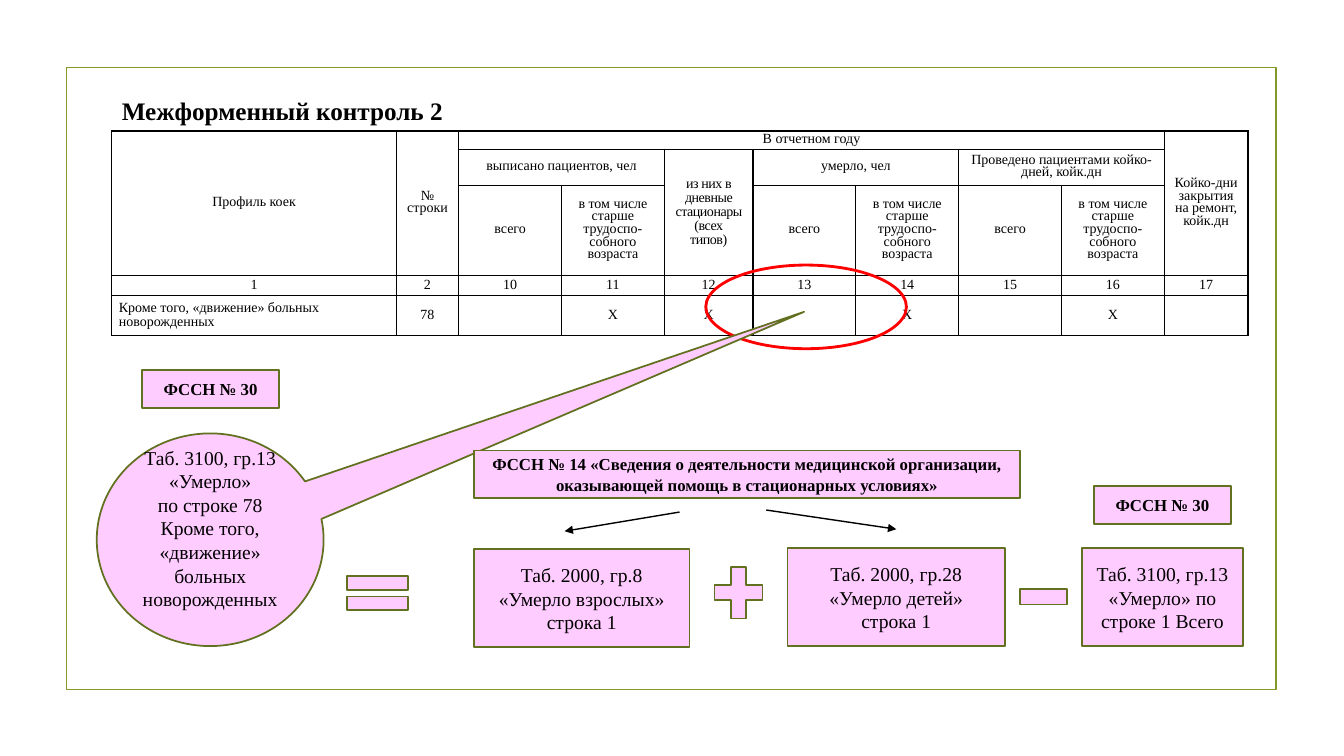
from lxml import etree
from pptx import Presentation
from pptx.dml.color import RGBColor
from pptx.enum.shapes import MSO_CONNECTOR, MSO_SHAPE
from pptx.enum.text import MSO_ANCHOR, PP_ALIGN
from pptx.oxml.ns import qn
from pptx.util import Inches, Pt

RECTANGLE, ELLIPSE = MSO_SHAPE.RECTANGLE, MSO_SHAPE.OVAL
CALLOUT = MSO_SHAPE.OVAL_CALLOUT
EQUAL, PLUS, MINUS = MSO_SHAPE.MATH_EQUAL, MSO_SHAPE.MATH_PLUS, MSO_SHAPE.MATH_MINUS
STRAIGHT = MSO_CONNECTOR.STRAIGHT
LEFT, CENTER = PP_ALIGN.LEFT, PP_ALIGN.CENTER
MIDDLE = MSO_ANCHOR.MIDDLE

FONT = "Times New Roman"
BLACK, PINK, OLIVE, FRAME_GREEN, RED = "000000", "FFCCFF", "61711F", "83992A", "FF0000"

COLUMN_WIDTHS = [2.82, 0.62, 1.02, 1.02, 0.88, 1.02, 1.02, 1.02, 1.02, 0.83]
ROW_HEIGHTS = [0.18, 0.36, 0.89, 0.2, 0.4]
HEADER_ROWS = 3
# Headings: row, column, rows spanned, columns spanned, text
HEADINGS = [
    (0, 0, 3, 1, "Профиль коек"),
    (0, 1, 3, 1, "№\vстроки"),
    (0, 2, 1, 7, "В отчетном году"),
    (0, 9, 3, 1, "Койко-дни закрытия на ремонт, койк.дн"),
    (1, 2, 1, 2, "выписано пациентов, чел"),
    (1, 4, 2, 1, "из них в дневные стационары (всех\vтипов)"),
    (1, 5, 1, 2, "умерло, чел"),
    (1, 7, 1, 2, "Проведено пациентами койко-дней, койк.дн"),
]
TOTAL_COLUMNS = (2, 5, 7)
DAY_HOSPITAL = (1, 4)
ELDERLY = "в том числе старше\nтрудоспо-\nсобного\nвозраста"
COLUMN_NUMBERS = ["1", "2"] + [str(number) for number in range(10, 18)]
NEWBORNS = ["Кроме того, «движение» больных новорожденных", "78",
            "", "X", "X", "", "X", "", "X", ""]


def color(value):
    return RGBColor.from_string(value)


def write(frame, text, size, bold=False, align=CENTER, spacing=None):
    """Fill a text frame: a newline starts a paragraph, \\v breaks a line."""
    frame.word_wrap = True
    for index, line in enumerate(text.split("\n")):
        para = frame.paragraphs[0] if index == 0 else frame.add_paragraph()
        para.text = line
        para.alignment = align
        if spacing:
            para.line_spacing = Pt(spacing)
        para.font.name, para.font.size, para.font.bold = FONT, Pt(size), bold
        para.font.color.rgb = color(BLACK)


def add_box(page, kind, box, text="", size=14, bold=False,
            fill=PINK, line=OLIVE, weight=1.25):
    shape = page.shapes.add_shape(kind, *map(Inches, box))
    shape.shadow.inherit = False
    if fill:
        shape.fill.solid()
        shape.fill.fore_color.rgb = color(fill)
    else:
        shape.fill.background()
    shape.line.color.rgb = color(line)
    shape.line.width = Pt(weight)
    if text:
        shape.text_frame.vertical_anchor = MIDDLE
        write(shape.text_frame, text, size, bold)
    return shape


def add_arrow(page, start, end):
    arrow = page.shapes.add_connector(STRAIGHT, *map(Inches, start + end))
    arrow.line.color.rgb = color(BLACK)
    arrow.line.width = Pt(1)
    properties = arrow.line._get_or_add_ln()
    etree.SubElement(properties, qn("a:tailEnd"), type="triangle")
    etree.SubElement(arrow._element.spPr, qn("a:effectLst"))


def add_borders(cell):
    properties = cell._tc.get_or_add_tcPr()
    for index, side in enumerate(("a:lnL", "a:lnR", "a:lnT", "a:lnB")):
        line = etree.Element(qn(side), w=str(Pt(1)))
        fill = etree.SubElement(line, qn("a:solidFill"))
        etree.SubElement(fill, qn("a:srgbClr"), val=BLACK)
        properties.insert(index, line)


def add_beds_table(page, left, top):
    table = page.shapes.add_table(
        len(ROW_HEIGHTS), len(COLUMN_WIDTHS), Inches(left), Inches(top),
        Inches(sum(COLUMN_WIDTHS)), Inches(sum(ROW_HEIGHTS))).table
    table.first_row = table.horz_banding = False
    for column, width in zip(table.columns, COLUMN_WIDTHS):
        column.width = Inches(width)
    for row, height in zip(table.rows, ROW_HEIGHTS):
        row.height = Inches(height)

    # Gather the texts by cell
    texts = {(row, column): text for row, column, _, _, text in HEADINGS}
    for column in TOTAL_COLUMNS:
        texts[2, column] = "всего"
        texts[2, column + 1] = ELDERLY
    for row, values in enumerate((COLUMN_NUMBERS, NEWBORNS), HEADER_ROWS):
        texts.update({(row, column): text for column, text in enumerate(values)})

    for row in range(len(ROW_HEIGHTS)):
        for column in range(len(COLUMN_WIDTHS)):
            cell = table.cell(row, column)
            cell.fill.background()
            cell.vertical_anchor = MIDDLE
            cell.margin_left = cell.margin_right = Inches(0.07)
            cell.margin_top = cell.margin_bottom = 0
            add_borders(cell)
            tall = row >= HEADER_ROWS or (row, column) == DAY_HOSPITAL
            write(cell.text_frame, texts.get((row, column), ""), 10,
                  align=LEFT if (row, column) == (4, 0) else CENTER,
                  spacing=10 if tall else 9)
    for row, column, rows, columns, _ in HEADINGS:
        table.cell(row, column).merge(table.cell(row + rows - 1, column + columns - 1))

    # The narrow day hospital heading has tighter letters
    for span in table.cell(*DAY_HOSPITAL).text_frame.paragraphs[0].runs:
        span._r.get_or_add_rPr().set("spc", "-30")


def add_heading(page, left, top, width, height):
    box = page.shapes.add_textbox(*map(Inches, (left, top, width, height)))
    write(box.text_frame, "Межформенный контроль 2", 18, bold=True, align=LEFT)


def add_died_callout(page, left, top, width, height):
    callout = add_box(page, CALLOUT, (left, top, width, height),
                      "Таб. 3100, гр.13 «Умерло»\vпо строке 78 Кроме того, "
                      "«движение» больных новорожденных")
    callout.adjustments[0], callout.adjustments[1] = 2.618, -1.072
    callout.text_frame.margin_bottom = Inches(0.28)


def add_formula(page, left, top):
    """Equality of the callout with the three terms on its right."""
    height = 0.97
    add_box(page, EQUAL, (left, top + 0.16, 0.83, 0.57))
    add_box(page, RECTANGLE, (left + 1.37, top + 0.01, 2.14, height),
            "Таб. 2000, гр.8 «Умерло взрослых»\vстрока 1")
    add_box(page, PLUS, (left + 3.67, top + 0.09, 0.65, 0.7))
    add_box(page, RECTANGLE, (left + 4.48, top, 2.16, height),
            "Таб. 2000, гр.28 «Умерло детей»\vстрока 1")
    add_box(page, MINUS, (left + 6.7, top + 0.15, 0.64, 0.66))
    add_box(page, RECTANGLE, (left + 7.4, top, 1.6, height),
            "Таб. 3100, гр.13 «Умерло» по строке 1 Всего")


def add_form_labels(page):
    for left, top in ((1.41, 3.67), (10.85, 4.82)):
        add_box(page, RECTANGLE, (left, top, 1.36, 0.38), "ФССН № 30", 12, True)
    add_box(page, RECTANGLE, (4.7, 4.47, 5.42, 0.47),
            "ФССН № 14 «Сведения о деятельности медицинской организации, "
            "оказывающей помощь в стационарных условиях»", 12, True)
    add_arrow(page, (6.74, 5.08), (5.6, 5.27))
    add_arrow(page, (7.6, 5.06), (8.89, 5.25))


def main():
    deck = Presentation()
    deck.slide_width, deck.slide_height = Inches(13.33), Inches(7.5)
    page = deck.slides.add_slide(deck.slide_layouts[6])
    # Frame, heading and table
    add_box(page, RECTANGLE, (0.66, 0.67, 12, 6.17), fill=None, line=FRAME_GREEN)
    add_heading(page, 1.11, 0.9, 11.26, 0.4)
    add_beds_table(page, 1.11, 1.3)
    # Checked cell and the formula explaining it
    add_box(page, ELLIPSE, (7, 2.63, 1.99, 0.83), fill=None, line=RED, weight=2)
    add_died_callout(page, 0.96, 4.3, 2.25, 2.11)
    add_formula(page, 3.33, 5.44)
    add_form_labels(page)
    deck.save("out.pptx")


if __name__ == "__main__":
    main()
